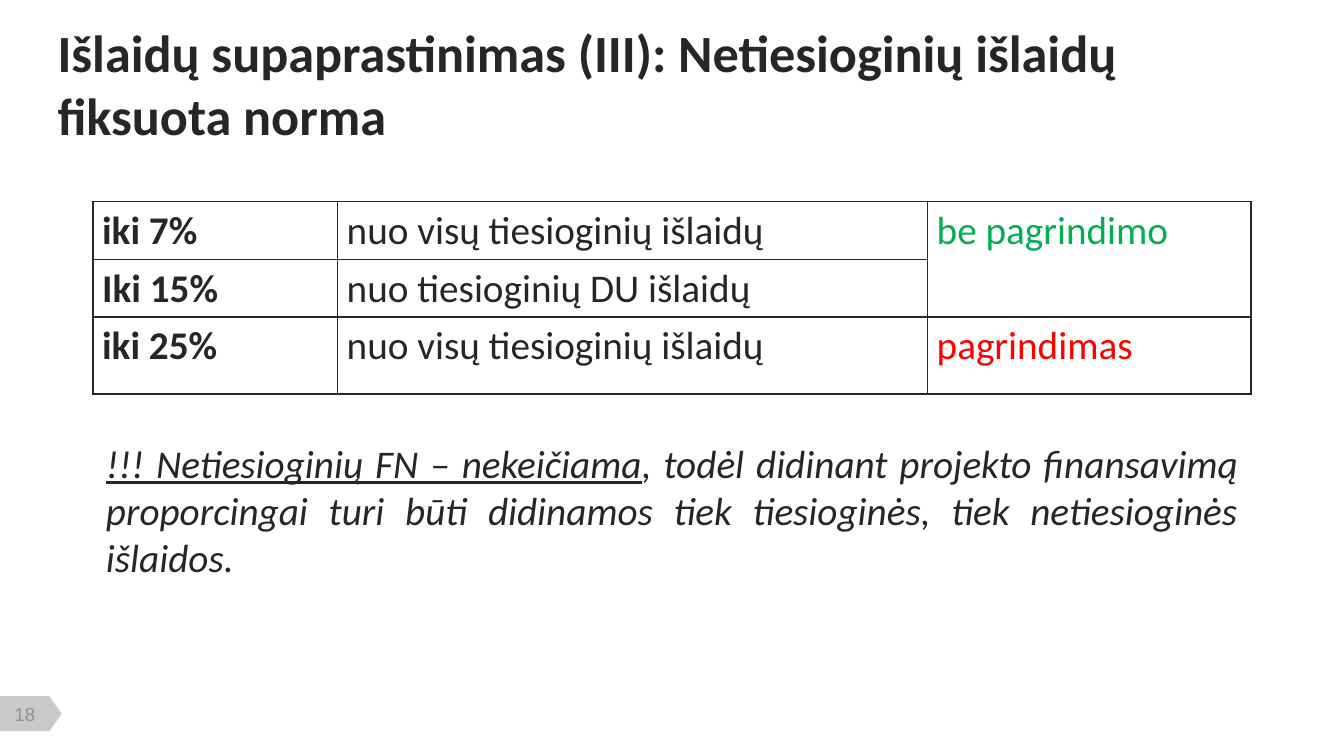
from dataclasses import dataclass
from itertools import product

from pptx import Presentation
from pptx.dml.color import RGBColor
from pptx.enum.shapes import MSO_SHAPE as Shape
from pptx.enum.text import MSO_ANCHOR as Anchor, PP_ALIGN as Align
from pptx.oxml import parse_xml
from pptx.oxml.ns import nsdecls
from pptx.util import Inches, Pt

COLUMNS, ROWS = 100, 56.25
DECK_WIDTH = Inches(10)
DECK_HEIGHT = DECK_WIDTH * 9 // 16
INK, GREEN, RED = "262626", "00B050", "FF0000"
TAG_FILL, TAG_TEXT = "C9C9C9", "929292"
BODY_SIZE = 21


@dataclass(frozen=True)
class Area:
    left: float
    top: float
    width: float
    height: float

    def lengths(self) -> tuple[int, int, int, int]:
        return across(self.left), down(self.top), across(self.width), down(self.height)


@dataclass(frozen=True)
class Rate:
    limit: str
    base: str
    reason: str
    color: str
    height: float


RATES = [
    Rate("iki 7%", "nuo visų tiesioginių išlaidų", "be pagrindimo", GREEN, 3.6),
    Rate("Iki 15%", "nuo tiesioginių DU išlaidų", "", GREEN, 3.6),
    Rate("iki 25%", "nuo visų tiesioginių išlaidų", "pagrindimas", RED, 5.7),
]
RATE_WIDTHS = [18.2, 43.9, 24.1]


def across(columns: float) -> int:
    return round(DECK_WIDTH * columns / COLUMNS)


def down(rows: float) -> int:
    return round(DECK_HEIGHT * rows / ROWS)


def color_of(value: str) -> RGBColor:
    return RGBColor.from_string(value)


def add_span(para, text: str, *, size: float = BODY_SIZE, font: str = "Calibri",
             color: str = INK, bold: bool = False, italic: bool = False,
             underline: bool = False) -> None:
    span = para.add_run()
    span.text = text
    span.font.name, span.font.size = font, Pt(size)
    span.font.bold, span.font.italic, span.font.underline = bold, italic, underline
    span.font.color.rgb = color_of(color)


def add_box(page, area: Area, align: Align, anchor: Anchor = Anchor.TOP,
            inset: float | None = None):
    frame = page.shapes.add_textbox(*area.lengths()).text_frame
    frame.word_wrap = True
    frame.vertical_anchor = anchor
    if inset is not None:
        frame.margin_left = frame.margin_right = Inches(inset)
        frame.margin_top = frame.margin_bottom = Inches(inset)
    para = frame.paragraphs[0]
    para.alignment = align
    return para


def draw_page_tag(page, number: str) -> None:
    tag = page.shapes.add_shape(
        Shape.FLOWCHART_OFFPAGE_CONNECTOR, *Area(1, 50.8, 2.6, 4.6).lengths())
    tag.rotation = 270
    tag.shadow.inherit = False
    tag.fill.solid()
    tag.fill.fore_color.rgb = color_of(TAG_FILL)
    tag.line.fill.background()
    para = add_box(page, Area(0.2, 52.3, 3.3, 1.7), Align.CENTER, Anchor.MIDDLE, 0)
    add_span(para, number, size=10, font="Arial", color=TAG_TEXT)


def style_cell(cell) -> None:
    cell.margin_left = cell.margin_right = Inches(0.07)
    cell.margin_top = cell.margin_bottom = Inches(0.04)
    properties = cell._tc.get_or_add_tcPr()
    for side in ("lnL", "lnR", "lnT", "lnB"):
        properties.append(parse_xml(
            f'<a:{side} {nsdecls("a")} w="{Pt(1)}"><a:solidFill>'
            f'<a:srgbClr val="{INK}"/></a:solidFill></a:{side}>'))
    cell.fill.background()


def draw_rates(page, rates: list[Rate]) -> None:
    area = Area(6.9, 15, sum(RATE_WIDTHS), sum(rate.height for rate in rates))
    table = page.shapes.add_table(
        len(rates), len(RATE_WIDTHS), *area.lengths()).table
    table.first_row = table.horz_banding = False
    for column, width in zip(table.columns, RATE_WIDTHS):
        column.width = across(width)
    for row, rate in zip(table.rows, rates):
        row.height = down(rate.height)
    for row, column in product(range(len(rates)), range(len(RATE_WIDTHS))):
        style_cell(table.cell(row, column))
    table.cell(0, 2).merge(table.cell(1, 2))
    for row, rate in enumerate(rates):
        limit, base, reason = (cell.text_frame.paragraphs[0]
                               for cell in table.rows[row].cells)
        add_span(limit, rate.limit, bold=True)
        add_span(base, rate.base)
        if rate.reason:
            add_span(reason, rate.reason, color=rate.color)


def main() -> None:
    deck = Presentation()
    deck.slide_width, deck.slide_height = DECK_WIDTH, DECK_HEIGHT
    page = deck.slides.add_slide(deck.slide_layouts[6])
    draw_page_tag(page, "18")
    title = add_box(page, Area(3.3, 1, 91.9, 10.9), Align.LEFT)
    add_span(title, "Išlaidų supaprastinimas (III): Netiesioginių išlaidų fiksuota norma",
             size=28, bold=True)
    draw_rates(page, RATES)
    note = add_box(page, Area(6.9, 32.2, 86.2, 13.9), Align.JUSTIFY)
    add_span(note, "!!! Netiesioginių FN – nekeičiama", italic=True, underline=True)
    add_span(note, ", todėl didinant projekto finansavimą proporcingai turi būti "
             "didinamos tiek tiesioginės, tiek netiesioginės išlaidos.", italic=True)
    deck.save("out.pptx")


if __name__ == "__main__":
    main()
